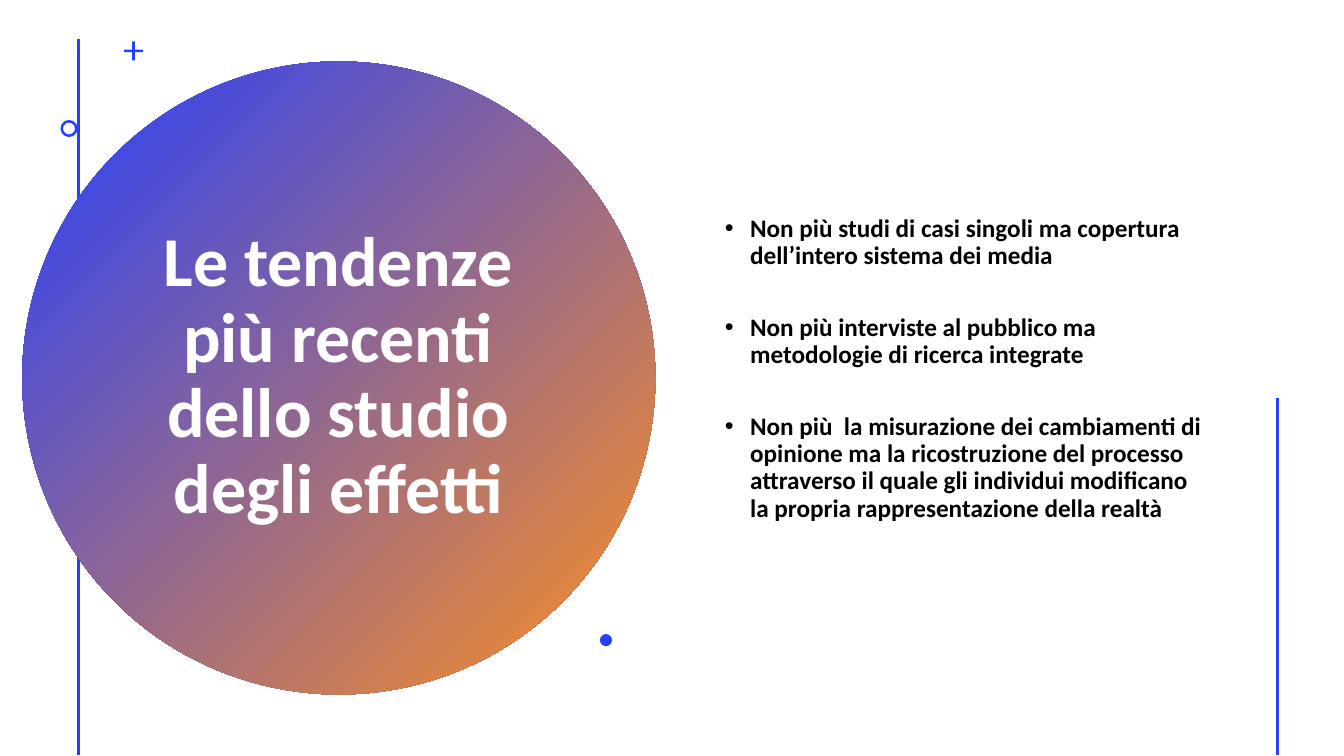
from lxml.etree import SubElement
from pptx import Presentation
from pptx.dml.color import RGBColor
from pptx.enum.shapes import MSO_CONNECTOR, MSO_SHAPE
from pptx.enum.text import MSO_ANCHOR, MSO_AUTO_SIZE, PP_ALIGN
from pptx.oxml.ns import qn
from pptx.util import Inches, Pt

# Content
HEADING = "Le tendenze più recenti dello studio degli effetti"
TRENDS = [
    "Non più studi di casi singoli ma copertura dell’intero sistema dei media",
    "Non più interviste al pubblico ma metodologie di ricerca integrate",
    "Non più  la misurazione dei cambiamenti di opinione ma la ricostruzione del "
    "processo attraverso il quale gli individui modificano la propria "
    "rappresentazione della realtà",
]

# Style
BLUE = RGBColor(0x24, 0x3F, 0xFF)
ORANGE = RGBColor(0xFF, 0x90, 0x22)
WHITE = RGBColor(0xFF, 0xFF, 0xFF)
BLACK = RGBColor(0, 0, 0)
FONT = "Calibri"

# Decoration: x and top of the rules; preset, left, top, size, adjustment of the marks
RULES = [(0.78, 0.39), (12.67, 3.95)]
RULE_BOTTOM = 7.49
MARKS = [
    (MSO_SHAPE.CROSS, 1.23, 0.41, 0.19, 0.43),
    (MSO_SHAPE.DONUT, 0.6, 1.19, 0.17, 0.15),
    (MSO_SHAPE.OVAL, 5.95, 6.29, 0.12, None),
]


def add_rule(slide, x, top):
    rule = slide.shapes.add_connector(
        MSO_CONNECTOR.STRAIGHT, Inches(x), Inches(top), Inches(x), Inches(RULE_BOTTOM))
    rule.line.color.rgb = BLUE
    rule.line.width = Pt(2)
    SubElement(rule._element.spPr, qn("a:effectLst"))


def add_mark(slide, preset, left, top, size, adjustment=None):
    mark = slide.shapes.add_shape(
        preset, Inches(left), Inches(top), Inches(size), Inches(size))
    mark.shadow.inherit = False
    mark.line.fill.background()
    mark.fill.solid()
    mark.fill.fore_color.rgb = BLUE
    if adjustment is not None:
        mark.adjustments[0] = adjustment
    return mark


def write_text(holder, box, paragraphs, *, size, color, align=PP_ALIGN.LEFT,
               anchor=MSO_ANCHOR.MIDDLE, top_inset=0.05, gap=0, bullet=None):
    holder.left, holder.top, holder.width, holder.height = map(Inches, box)
    frame = holder.text_frame
    frame.word_wrap = True
    frame.auto_size = MSO_AUTO_SIZE.NONE
    frame.vertical_anchor = anchor
    frame.margin_top = Inches(top_inset)
    for i, words in enumerate(paragraphs):
        paragraph = frame.paragraphs[0] if i == 0 else frame.add_paragraph()
        paragraph.alignment = align
        paragraph.line_spacing = 0.9
        paragraph.space_before = Pt(0)
        paragraph.space_after = Pt(gap)
        if bullet:
            properties = paragraph._p.get_or_add_pPr()
            properties.set("marL", str(Inches(0.38)))
            properties.set("indent", str(Inches(-0.25)))
            SubElement(properties, qn("a:buFont"), typeface="Arial")
            SubElement(properties, qn("a:buChar"), char=bullet)
        run = paragraph.add_run()
        run.text = words
        run.font.name = FONT
        run.font.size = Pt(size)
        run.font.bold = True
        run.font.color.rgb = color


def main():
    deck = Presentation()
    deck.slide_width, deck.slide_height = Inches(13.33), Inches(7.5)
    slide = deck.slides.add_slide(deck.slide_layouts[1])
    heading, trends = slide.placeholders[0], slide.placeholders[1]

    # Left rule behind the gradient disc, then the right rule
    for x, top in RULES:
        add_rule(slide, x, top)
    disc = add_mark(slide, MSO_SHAPE.OVAL, 0.22, 0.61, 6.28)
    disc.fill.gradient()
    disc.fill.gradient_angle = 315
    for stop, color, position in zip(disc.fill.gradient_stops, (BLUE, ORANGE), (0, 1)):
        stop.color.rgb = color
        stop.position = position

    # Small marks
    for mark in MARKS:
        add_mark(slide, *mark)

    # Heading and list, brought in front of the disc
    for holder in (heading, trends):
        slide.shapes._spTree.append(holder._element)
    write_text(heading, (1.36, 1.41, 3.99, 4.67), [HEADING],
               size=50, color=WHITE, align=PP_ALIGN.CENTER)
    write_text(trends, (6.96, 1.61, 5.12, 5.88), TRENDS, size=18, color=BLACK,
               anchor=MSO_ANCHOR.TOP, top_inset=0.53, gap=31.8, bullet="•")

    deck.save("out.pptx")


if __name__ == "__main__":
    main()
